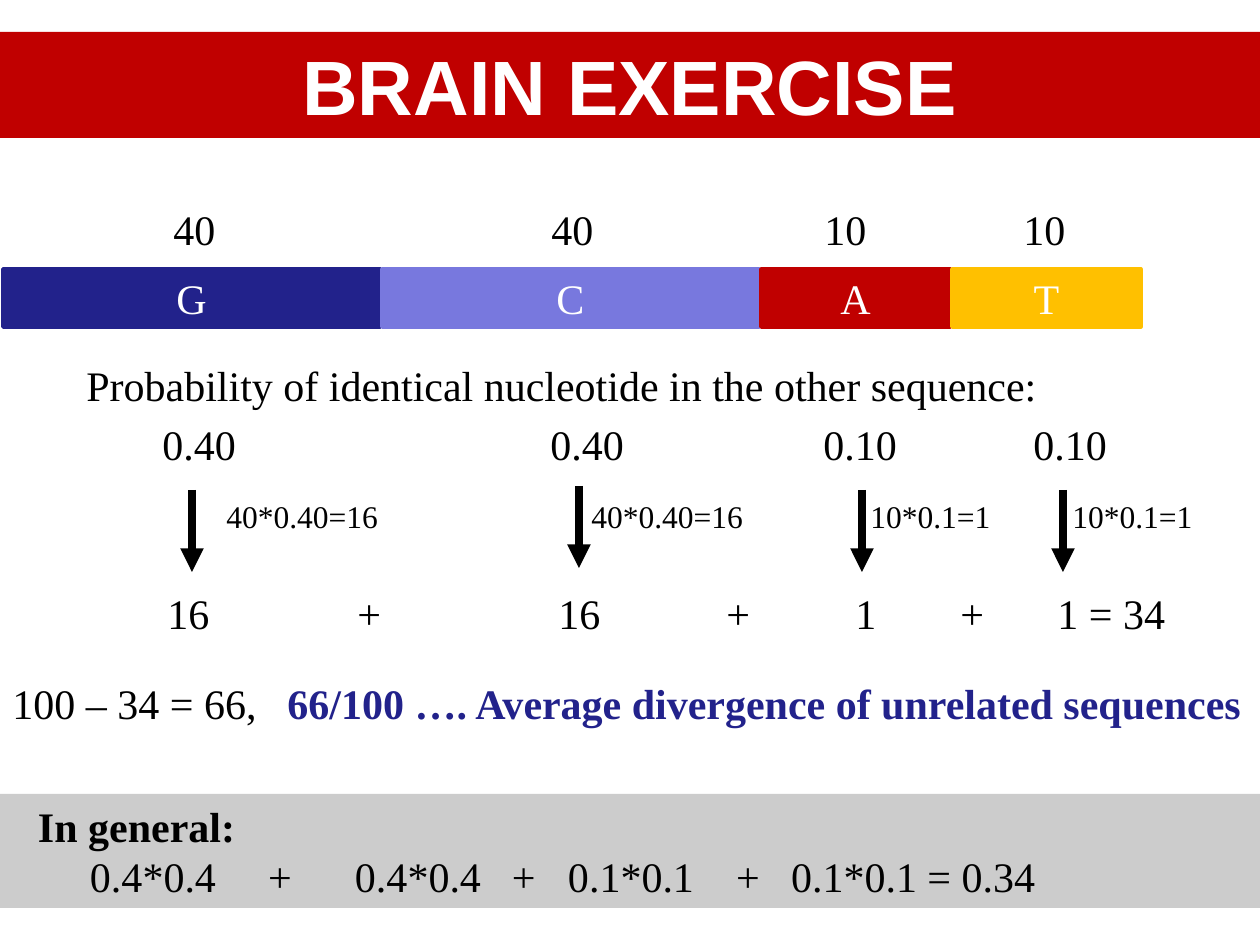
import pptx
import pptx.util
import pptx.dml.color
import pptx.enum.shapes
import pptx.enum.text
import pptx.oxml
import pptx.oxml.ns

RGB = pptx.dml.color.RGBColor
RED = RGB(0xC0, 0x00, 0x00)
NAVY = RGB(0x22, 0x22, 0x8B)
LILAC = RGB(0x78, 0x78, 0xDE)
GOLD = RGB(0xFF, 0xC0, 0x00)
GREY = RGB(0xCC, 0xCC, 0xCC)
BLACK = RGB(0, 0, 0)
WHITE = RGB(0xFF, 0xFF, 0xFF)
SCALE = 914400 / 126
RECT = pptx.enum.shapes.MSO_SHAPE.RECTANGLE
ALIGN = pptx.enum.text.PP_ALIGN
NS = pptx.oxml.ns.nsdecls("a")


def px(*nums):
    return [pptx.util.Emu(round(n * SCALE)) for n in nums]


def style(para, size=24, color=BLACK, bold=False, tabs=()):
    for run in para.runs:
        run.font.name = "Times New Roman"
        run.font.size = pptx.util.Pt(size)
        run.font.color.rgb = color
        run.font.bold = bold
    if tabs:
        stops = "".join(f'<a:tab pos="{p}" algn="l"/>' for p in px(*tabs))
        para._p.get_or_add_pPr().append(
            pptx.oxml.parse_xml(f"<a:tabLst {NS}>{stops}</a:tabLst>"))


prs = pptx.Presentation()
prs.slide_width, prs.slide_height = px(1260, 945)
slide = prs.slides.add_slide(prs.slide_layouts[5])
shapes = slide.shapes

# Title band
title = shapes.title
title.left, title.top, title.width, title.height = px(0, 32, 1260, 106)
title.fill.solid()
title.fill.fore_color.rgb = RED
title.text_frame.text = "BRAIN EXERCISE"
title.text_frame.vertical_anchor = pptx.enum.text.MSO_ANCHOR.MIDDLE
head = title.text_frame.paragraphs[0]
head.alignment = ALIGN.CENTER
style(head, 44, WHITE, True)
head.runs[0].font.name = "Arial"

# Nucleotide bar
group = shapes.add_group_shape()
x = 3
for base, wide, color in [("G", 377, NAVY), ("C", 377, LILAC),
                          ("A", 189, RED), ("T", 189, GOLD)]:
    bar = group.shapes.add_shape(RECT, *px(x, 269, wide, 58))
    bar.shadow.inherit = False
    bar.fill.solid()
    bar.fill.fore_color.rgb = color
    bar.line.color.rgb = color
    bar.line.width = pptx.util.Pt(2)
    bar.text_frame.text = base
    bar.text_frame.paragraphs[0].alignment = ALIGN.CENTER
    style(bar.text_frame.paragraphs[0], 24, WHITE)
    x += wide + 2

# Text rows: left, top, width, size, text, tab stops
rows = [
    (161, 197, 937, 24, "40\t40\t10\t10", (378, 651, 850)),
    (74, 353, 984, 24,
     "Probability of identical nucleotide in the other sequence:", ()),
    (150, 412, 980, 24, "0.40\t0.40\t0.10\t0.10", (388, 661, 871)),
    (214, 491, 179, 18, "40*0.40=16", ()),
    (579, 491, 179, 18, "40*0.40=16", ()),
    (858, 491, 146, 18, "10*0.1=1", ()),
    (1060, 491, 146, 18, "10*0.1=1", ()),
    (155, 581, 1032, 24, "16\t+\t16\t+\t1\t+\t1 = 34",
     (190, 391, 559, 688, 793, 890)),
    (0, 671, 1266, 24, "100 – 34 = 66,\t", (275,)),
]
for left, top, wide, size, text, tabs in rows:
    box = shapes.add_textbox(*px(left, top, wide, 50 if size == 18 else 63))
    box.text_frame.word_wrap = True
    box.text_frame.text = text
    para = box.text_frame.paragraphs[0]
    style(para, size, tabs=tabs)

# Bold result that ends the last row
run = para.add_run()
run.text = "66/100 …. Average divergence of unrelated sequences"
run.font.name = "Times New Roman"
run.font.size = pptx.util.Pt(24)
run.font.color.rgb = NAVY
run.font.bold = True

# Arrows
for x, y in [(192, 490), (579, 486), (862, 490), (1063, 490)]:
    arrow = shapes.add_connector(
        pptx.enum.shapes.MSO_CONNECTOR.STRAIGHT, *px(x, y, x, y + 82))
    arrow.line.color.rgb = BLACK
    arrow.line.width = pptx.util.Pt(4.5)
    arrow.line._get_or_add_ln().append(
        pptx.oxml.parse_xml(f'<a:tailEnd {NS} type="triangle"/>'))
    arrow._element.spPr.append(pptx.oxml.parse_xml(f"<a:effectLst {NS}/>"))

# General rule
rule = shapes.add_shape(RECT, *px(-6, 794, 1266, 114))
rule.shadow.inherit = False
rule.fill.solid()
rule.fill.fore_color.rgb = GREY
rule.line.fill.background()
frame = rule.text_frame
frame.margin_left = px(44)[0]
frame.vertical_anchor = pptx.enum.text.MSO_ANCHOR.TOP
frame.text = ("In general:\n"
              "\t0.4*0.4\t+\t0.4*0.4\t+\t0.1*0.1\t+\t0.1*0.1 = 0.34")
for para in frame.paragraphs:
    para.alignment = ALIGN.LEFT
style(frame.paragraphs[0], bold=True)
style(frame.paragraphs[1], tabs=(52, 230, 317, 474, 530, 698, 753))

prs.save("out.pptx")
